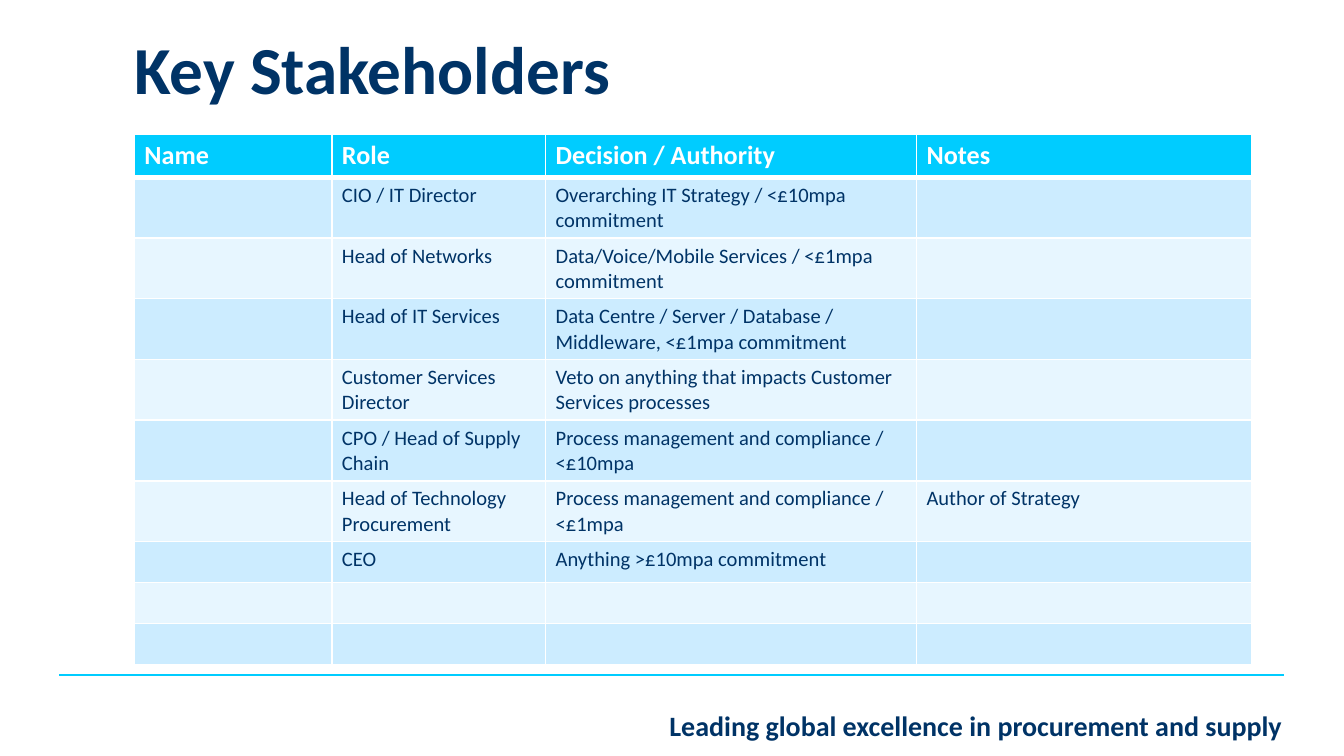
import pptx
import pptx.util
import pptx.dml.color
import pptx.enum.shapes
import pptx.enum.text
import pptx.oxml.ns
from dataclasses import dataclass
from lxml import etree

PX = 4572  # 200 px to the inch
FONT = "Calibri"
NAVY = pptx.dml.color.RGBColor(0x00, 0x33, 0x66)
CYAN = pptx.dml.color.RGBColor(0x00, 0xCC, 0xFF)
PALE = pptx.dml.color.RGBColor(0xCC, 0xEC, 0xFF)
MIST = pptx.dml.color.RGBColor(0xE7, 0xF6, 0xFF)
WHITE = pptx.dml.color.RGBColor(0xFF, 0xFF, 0xFF)


@dataclass
class Style:
    size: int
    color: pptx.dml.color.RGBColor
    bold: bool = False


TITLE = Style(36, NAVY, True)
FOOT = Style(15, NAVY, True)
HEAD = Style(14, WHITE, True)
BODY = Style(11, NAVY)

LOW, TALL = 61, 84


@dataclass
class Person:
    role: str = ""
    power: str = ""
    notes: str = ""
    high: int = TALL


HEADS = ("Name", "Role", "Decision / Authority", "Notes")
WIDTHS = (294, 318, 552, 499)
PEOPLE = (
    Person("CIO / IT Director", "Overarching IT Strategy / <£10mpa commitment"),
    Person("Head of Networks", "Data/Voice/Mobile Services / <£1mpa commitment"),
    Person("Head of IT Services",
           "Data Centre / Server / Database / Middleware, <£1mpa commitment"),
    Person("Customer Services Director",
           "Veto on anything that impacts Customer Services processes"),
    Person("CPO / Head of Supply Chain",
           "Process management and compliance / <£10mpa"),
    Person("Head of Technology Procurement",
           "Process management and compliance / <£1mpa", "Author of Strategy"),
    Person("CEO", "Anything >£10mpa commitment", high=LOW),
    Person(high=LOW),
    Person(high=LOW),
)


def px(*nums: int) -> list[int]:
    return [num * PX for num in nums]


def write(para, text: str, style: Style) -> None:
    run = para.add_run()
    run.text = text
    run.font.name = FONT
    run.font.size = pptx.util.Pt(style.size)
    run.font.bold = style.bold
    run.font.color.rgb = style.color


def border(cell, side: str, width: int) -> None:
    props = cell._tc.get_or_add_tcPr()
    line = etree.SubElement(props, pptx.oxml.ns.qn("a:" + side),
                            w=str(pptx.util.Pt(width)))
    fill = etree.SubElement(line, pptx.oxml.ns.qn("a:solidFill"))
    etree.SubElement(fill, pptx.oxml.ns.qn("a:srgbClr"), val=str(WHITE))


def draw_cell(cell, text: str, style: Style, fill, top: int, base: int) -> None:
    cell.margin_left, cell.margin_right = px(15, 15)
    cell.margin_top, cell.margin_bottom = px(8, 9)
    for side, width in (("lnL", 1), ("lnR", 1), ("lnT", top), ("lnB", base)):
        border(cell, side, width)
    cell.fill.solid()
    cell.fill.fore_color.rgb = fill
    para = cell.text_frame.paragraphs[0]
    if text:
        write(para, text, style)
    else:
        # Keeps an empty row as low as a line of body text
        etree.SubElement(para._p, pptx.oxml.ns.qn("a:endParaRPr"),
                         sz=str(style.size * 100))


def draw_table(slide) -> None:
    highs = [LOW] + [person.high for person in PEOPLE]
    table = slide.shapes.add_table(
        len(highs), len(WIDTHS), *px(200, 200, sum(WIDTHS), sum(highs))).table
    for col, width in zip(table.columns, WIDTHS):
        col.width = width * PX
    for row, high in zip(table.rows, highs):
        row.height = high * PX
    for col, text in enumerate(HEADS):
        draw_cell(table.cell(0, col), text, HEAD, CYAN, 1, 3)
    for row, person in enumerate(PEOPLE, 1):
        fill = PALE if row % 2 else MIST
        top = 3 if row == 1 else 1
        for col, text in enumerate(("", person.role, person.power, person.notes)):
            draw_cell(table.cell(row, col), text, BODY, fill, top, 1)


def draw_foot(slide) -> None:
    box = slide.shapes.add_shape(
        pptx.enum.shapes.MSO_SHAPE.RECTANGLE, *px(704, 1044, 1224, 70))
    box.shadow.inherit = False
    box.fill.solid()
    box.fill.fore_color.rgb = WHITE
    box.line.fill.background()
    box.text_frame.word_wrap = True
    para = box.text_frame.paragraphs[0]
    para.alignment = pptx.enum.text.PP_ALIGN.RIGHT
    write(para, "Leading global excellence in procurement and supply", FOOT)

    rule = slide.shapes.add_connector(
        pptx.enum.shapes.MSO_CONNECTOR.STRAIGHT, *px(88, 1004, 1910, 1004))
    rule.line.color.rgb = CYAN
    rule.line.width = pptx.util.Pt(1)
    etree.SubElement(rule._element.spPr, pptx.oxml.ns.qn("a:effectLst"))


def draw_title(slide) -> None:
    frame = slide.shapes.add_textbox(*px(200, 60, 1662, 218)).text_frame
    frame.word_wrap = True
    frame.margin_left = frame.margin_right = 0
    frame.margin_top = frame.margin_bottom = 0
    para = frame.paragraphs[0]
    para.line_spacing = pptx.util.Pt(36)
    write(para, "Key Stakeholders", TITLE)


def main() -> None:
    deck = pptx.Presentation()
    deck.slide_width, deck.slide_height = px(2000, 1125)
    slide = deck.slides.add_slide(deck.slide_layouts[6])
    # Footer and rule
    draw_foot(slide)
    # Heading
    draw_title(slide)
    # Stakeholder grid
    draw_table(slide)
    deck.save("out.pptx")


if __name__ == "__main__":
    main()
